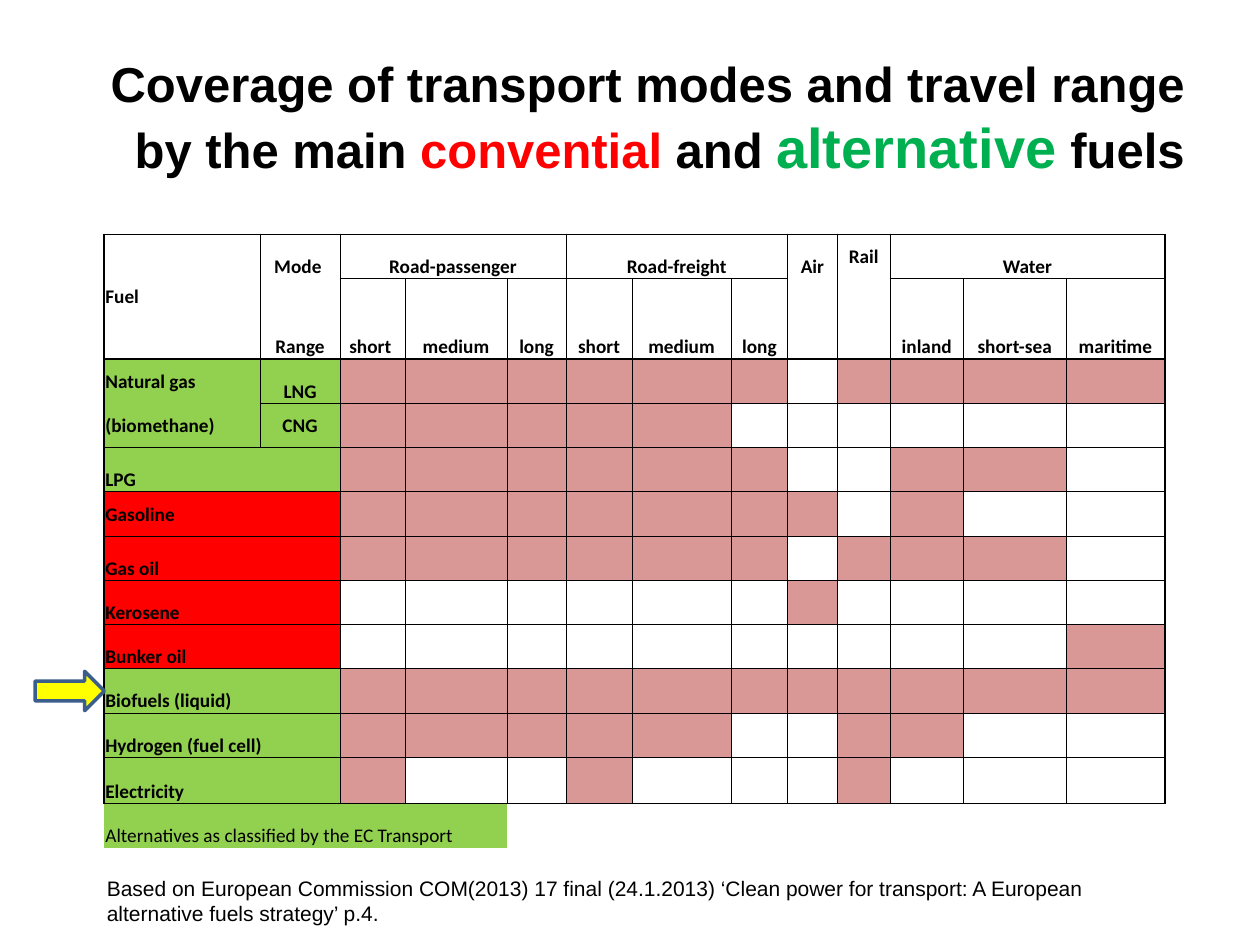
from lxml.etree import SubElement
from pptx import Presentation
from pptx.dml.color import RGBColor
from pptx.enum.shapes import MSO_SHAPE
from pptx.enum.text import MSO_ANCHOR, PP_ALIGN
from pptx.oxml.ns import qn
from pptx.util import Pt

HUE = {"ink": "000000", "red": "FF0000", "leaf": "00B050", "green": "92D050",
       "rose": "D99795", "sun": "FFFF00", "edge": "3A5F8C"}
COLS = [89.2, 45.6, 37.2, 58.3, 33.8, 37.6, 56.8, 32.1, 28.6, 30.1, 41.9, 58.7, 56.4]
ROWS = [25.3, 46] + [25.3] * 9 + [26.4, 25.3]
MID, LOW = MSO_ANCHOR.MIDDLE, MSO_ANCHOR.BOTTOM

# Header cells: row, column, text, rows spanned, columns spanned, anchor
HEADS = [
    (0, 0, "Fuel", 2, 1, MID), (0, 1, "Mode ", 1, 1, LOW),
    (0, 2, "Road-passenger", 1, 3, LOW), (0, 5, "Road-freight", 1, 3, LOW),
    (0, 8, "Air", 1, 1, LOW), (0, 9, "Rail", 1, 1, MID),
    (0, 10, "Water", 1, 3, LOW), (1, 1, "Range", 1, 1, LOW),
]
RANGES = {2: "short ", 3: "medium", 4: "long", 5: "short", 6: "medium", 7: "long",
          10: "inland", 11: "short-sea", 12: "maritime"}

# Fuel rows: name, subtype, anchor, colour, coverage of the eleven ranges
FUELS = [
    ("Natural gas", "LNG", MID, "green", "xxxxxx.xxxx"),
    ("(biomethane)", "CNG", MID, "green", "xxxxx......"),
    ("LPG", "", LOW, "green", "xxxxxx..xx."),
    ("Gasoline", "", MID, "red", "xxxxxxx.x.."),
    ("Gas oil", "", LOW, "red", "xxxxxx.xxx."),
    ("Kerosene", "", LOW, "red", "......x...."),
    ("Bunker oil", "", LOW, "red", "..........x"),
    ("Biofuels (liquid)", "", LOW, "green", "xxxxxxxxxxx"),
    ("Hydrogen (fuel cell)", "", LOW, "green", "xxxxx..xx.."),
    ("Electricity", "", LOW, "green", "x..x...x..."),
]
LAST = 2 + len(FUELS)
OPEN = {(1, 1), (1, 8), (1, 9), (3, 0)}  # places with no rule above the cell


def color(name):
    return RGBColor.from_string(HUE[name])


def write(frame, text, size=12, font="Arial", hue="ink", bold=False,
          align=PP_ALIGN.LEFT):
    para = frame.paragraphs[0]
    para.alignment = align
    run = para.add_run()
    run.text = text
    run.font.size = Pt(size)
    run.font.name = font
    run.font.bold = bold
    run.font.color.rgb = color(hue)


def add_box(slide, box, anchor):
    frame = slide.shapes.add_textbox(*map(Pt, box)).text_frame
    frame.word_wrap = True
    frame.vertical_anchor = anchor
    return frame


def add_title(slide, box):
    frame = add_box(slide, box, MID)
    for text, size, hue in [
        ("Coverage of transport modes and travel range by the main ", 28, "ink"),
        ("convential ", 28, "red"), ("and ", 28, "ink"),
        ("alternative", 32, "leaf"), (" ", 28, "red"), ("fuels", 28, "ink"),
    ]:
        write(frame, text, size=size, hue=hue, bold=True, align=PP_ALIGN.RIGHT)


def row_rule(row, col):
    """Width of the rule above the given row."""
    if row > LAST or (row, col) in OPEN:
        return 0
    return 1 if row in (0, 2, LAST) else 0.5


def col_rule(row, col):
    """Width of the rule left of the given column."""
    if row == LAST:
        return 0
    return 1 if col in (0, len(COLS)) else 0.5


def set_rules(cell, row, col):
    low = row + (cell.span_height if cell.is_merge_origin else 1)
    right = col + (cell.span_width if cell.is_merge_origin else 1)
    props = cell._tc.get_or_add_tcPr()
    for tag, width in [("a:lnL", col_rule(row, col)), ("a:lnR", col_rule(row, right)),
                       ("a:lnT", row_rule(row, col)), ("a:lnB", row_rule(low, col))]:
        line = SubElement(props, qn(tag), w=str(Pt(width)))
        if width:
            fill = SubElement(line, qn("a:solidFill"))
            SubElement(fill, qn("a:srgbClr"), val=HUE["ink"])
        else:
            SubElement(line, qn("a:noFill"))


def add_grid(slide, box):
    table = slide.shapes.add_table(len(ROWS), len(COLS), *map(Pt, box)).table
    table.first_row = table.horz_banding = False
    for part, size in zip(table.columns, COLS):
        part.width = Pt(size)
    for part, size in zip(table.rows, ROWS):
        part.height = Pt(size)
    fills = {}

    def put(row, col, text, high=1, wide=1, anchor=LOW,
            align=PP_ALIGN.CENTER, bold=True):
        cell = table.cell(row, col)
        if high * wide > 1:
            cell.merge(table.cell(row + high - 1, col + wide - 1))
        cell.vertical_anchor = anchor
        write(cell.text_frame, text, size=11, font="Calibri", bold=bold, align=align)

    # Modes and ranges
    for row, col, text, high, wide, anchor in HEADS:
        align = PP_ALIGN.CENTER if col else PP_ALIGN.LEFT
        put(row, col, text, high, wide, anchor, align)
    for col, text in RANGES.items():
        put(1, col, text)

    # Fuels and their coverage
    for row, (name, kind, anchor, hue, marks) in enumerate(FUELS, 2):
        put(row, 0, name, 1, 1 if kind else 2, anchor, PP_ALIGN.LEFT)
        if kind:
            put(row, 1, kind, anchor=MID if kind == "CNG" else LOW)
        fills[row, 0] = fills[row, 1] = hue
        for col, mark in enumerate(marks, 2):
            if mark == "x":
                fills[row, col] = "rose"

    # Key below the grid
    put(LAST, 0, "Alternatives as classified by the EC Transport", wide=4,
        align=PP_ALIGN.LEFT, bold=False)
    for col in range(4):
        fills[LAST, col] = "green"

    # Margins, rules and fills
    for row in range(len(ROWS)):
        for col in range(len(COLS)):
            cell = table.cell(row, col)
            cell.margin_left = cell.margin_right = cell.margin_top = Pt(0.72)
            cell.margin_bottom = Pt(0)
            set_rules(cell, row, col)
            if (row, col) in fills:
                cell.fill.solid()
                cell.fill.fore_color.rgb = color(fills[row, col])
            else:
                cell.fill.background()


def add_note(slide, box):
    frame = add_box(slide, box, MSO_ANCHOR.TOP)
    write(frame, "Based on European Commission COM(2013) 17 final (24.1.2013) "
          "‘Clean power for transport: A European alternative fuels strategy’ p.4.")


def add_arrow(slide, box):
    arrow = slide.shapes.add_shape(MSO_SHAPE.RIGHT_ARROW, *map(Pt, box))
    arrow.shadow.inherit = False
    arrow.fill.solid()
    arrow.fill.fore_color.rgb = color("sun")
    arrow.line.color.rgb = color("edge")
    arrow.line.width = Pt(2)


def main():
    deck = Presentation()
    deck.slide_width, deck.slide_height = Pt(720), Pt(540)
    slide = deck.slides.add_slide(deck.slide_layouts[6])
    add_title(slide, (36, 21.6, 648, 90))
    add_grid(slide, (59.5, 133.9, sum(COLS), sum(ROWS)))
    add_note(slide, (54, 496.8, 612, 36))
    add_arrow(slide, (20, 383.6, 39.6, 22.5))
    deck.save("out.pptx")


if __name__ == "__main__":
    main()
